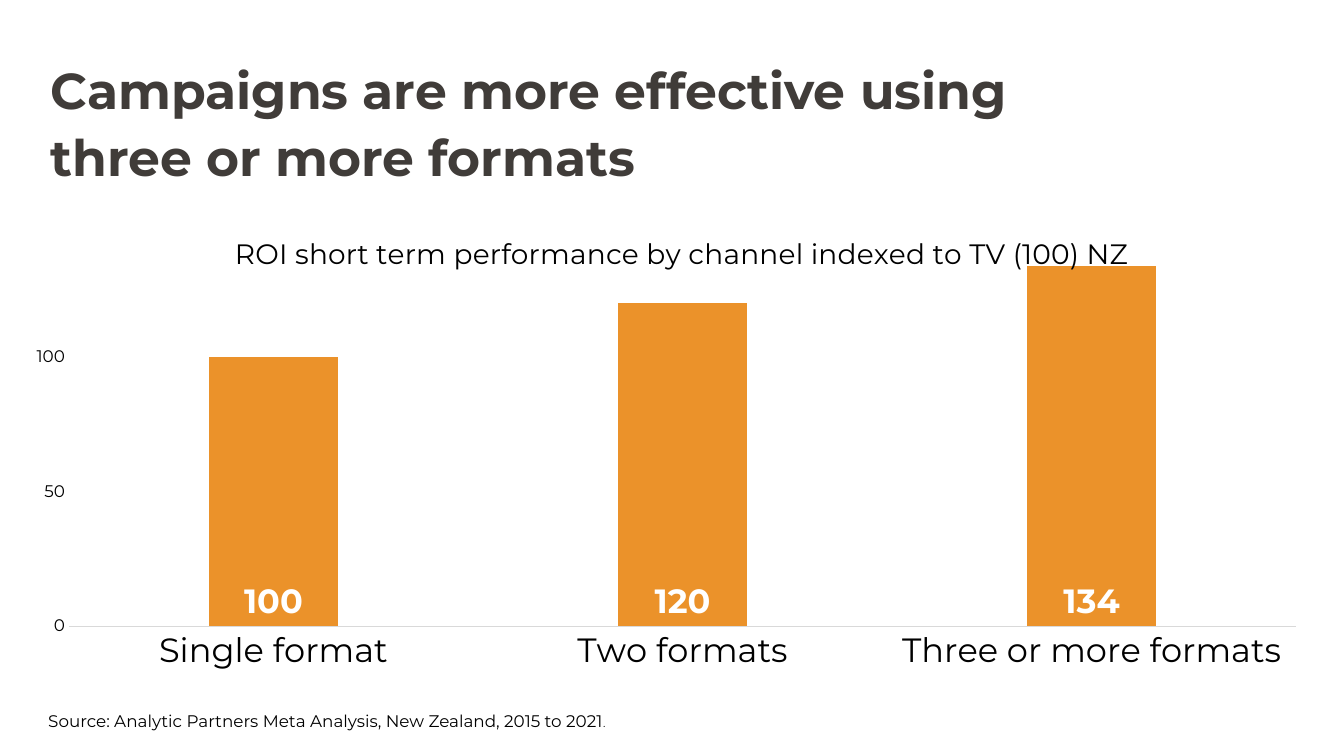
from pptx import Presentation
from pptx.chart.data import CategoryChartData
from pptx.dml.color import RGBColor
from pptx.enum.chart import XL_CHART_TYPE, XL_LABEL_POSITION, XL_TICK_MARK
from pptx.enum.text import MSO_ANCHOR, MSO_AUTO_SIZE, PP_ALIGN
from pptx.oxml import parse_xml
from pptx.oxml.ns import nsdecls, qn
from pptx.util import Inches, Pt

COLUMN = XL_CHART_TYPE.COLUMN_CLUSTERED
BASE = XL_LABEL_POSITION.INSIDE_BASE
NO_TICK = XL_TICK_MARK.NONE
TOP = MSO_ANCHOR.TOP
LEFT = PP_ALIGN.LEFT
NO_FIT = MSO_AUTO_SIZE.NONE
FACE = "Montserrat"


def tint(code):
    return RGBColor.from_string(code)


def style(font, size, code="000000", bold=False):
    for key, val in {"name": FACE, "size": Pt(size), "bold": bold}.items():
        setattr(font, key, val)
    font.color.rgb = tint(code)


def place(part, spot, **vals):
    old = part.find(qn("c:layout"))
    if old is not None:
        part.remove(old)
    body = "".join(f'<c:{key} val="{val}"/>' for key, val in vals.items())
    part.insert(spot, parse_xml(
        f'<c:layout {nsdecls("c")}><c:manualLayout>{body}'
        "</c:manualLayout></c:layout>"))


def head(slide, box):
    shape = slide.shapes.title
    shape.left, shape.top, shape.width, shape.height = map(Inches, box)
    frame = shape.text_frame
    rules = {"margin_left": 0, "margin_right": 0, "margin_top": 0,
             "margin_bottom": 0, "vertical_anchor": TOP,
             "word_wrap": True, "auto_size": NO_FIT}
    for key, val in rules.items():
        setattr(frame, key, val)
    para = frame.paragraphs[0]
    para.alignment = LEFT
    para.line_spacing = 1.1
    run = para.add_run()
    run.text = "Campaigns are more effective using three or more formats"
    style(run.font, 36, "403C39", True)


def graph(slide, box):
    data = CategoryChartData()
    data.categories = ["Single format", "Two formats", "Three or more formats"]
    data.add_series("Series 1", [100, 120, 134])
    chart = slide.shapes.add_chart(COLUMN, *map(Inches, box), data).chart
    style(chart.font, 10)
    chart.has_legend = False

    chart.has_title = True
    title = chart.chart_title
    run = title.text_frame.paragraphs[0].add_run()
    run.text = "ROI short term performance by channel indexed to TV (100) NZ"
    style(run.font, 20)
    place(title._element, 1, xMode="edge", yMode="edge", x=0.16, y=0.07)
    place(chart._chartSpace.chart.plotArea, 0, layoutTarget="inner",
          xMode="edge", yMode="edge", x=0.036, y=0.11, w=0.945, h=0.713)

    for axis, size in ((chart.category_axis, 24), (chart.value_axis, 12)):
        axis.has_major_gridlines = False
        axis.major_tick_mark = axis.minor_tick_mark = NO_TICK
        style(axis.tick_labels.font, size)
    line = chart.category_axis.format.line
    line.color.rgb = tint("D9D9D9")
    line.width = Pt(0.75)
    scale = chart.value_axis
    scale.format.line.fill.background()
    rules = {"minimum_scale": 0, "maximum_scale": 140, "major_unit": 50}
    for key, val in rules.items():
        setattr(scale, key, val)

    plot = chart.plots[0]
    rules = {"gap_width": 219, "overlap": -46, "vary_by_categories": False}
    for key, val in rules.items():
        setattr(plot, key, val)
    bars = plot.series[0]
    bars.format.fill.solid()
    bars.format.fill.fore_color.rgb = tint("EB922A")
    labels = bars.data_labels
    labels.show_value = True
    labels.position = BASE
    style(labels.font, 24, "FFFFFF", True)


def source(slide, box):
    frame = slide.shapes.add_textbox(*map(Inches, box)).text_frame
    frame.word_wrap = True
    para = frame.paragraphs[0]
    parts = (("Source: Analytic Partners Meta Analysis, "
              "New Zealand, 2015 to 2021", 12), (".", 8))
    for text, size in parts:
        run = para.add_run()
        run.text = text
        style(run.font, size)


def main():
    deck = Presentation()
    deck.slide_width, deck.slide_height = Inches(13.33), Inches(7.5)
    slide = deck.slides.add_slide(deck.slide_layouts[5])
    head(slide, (0.5, 0.53, 9.6, 0.6))
    graph(slide, (0.22, 1.9, 12.88, 5.24))
    source(slide, (0.38, 7, 12.72, 0.44))
    deck.save("out.pptx")


if __name__ == "__main__":
    main()
